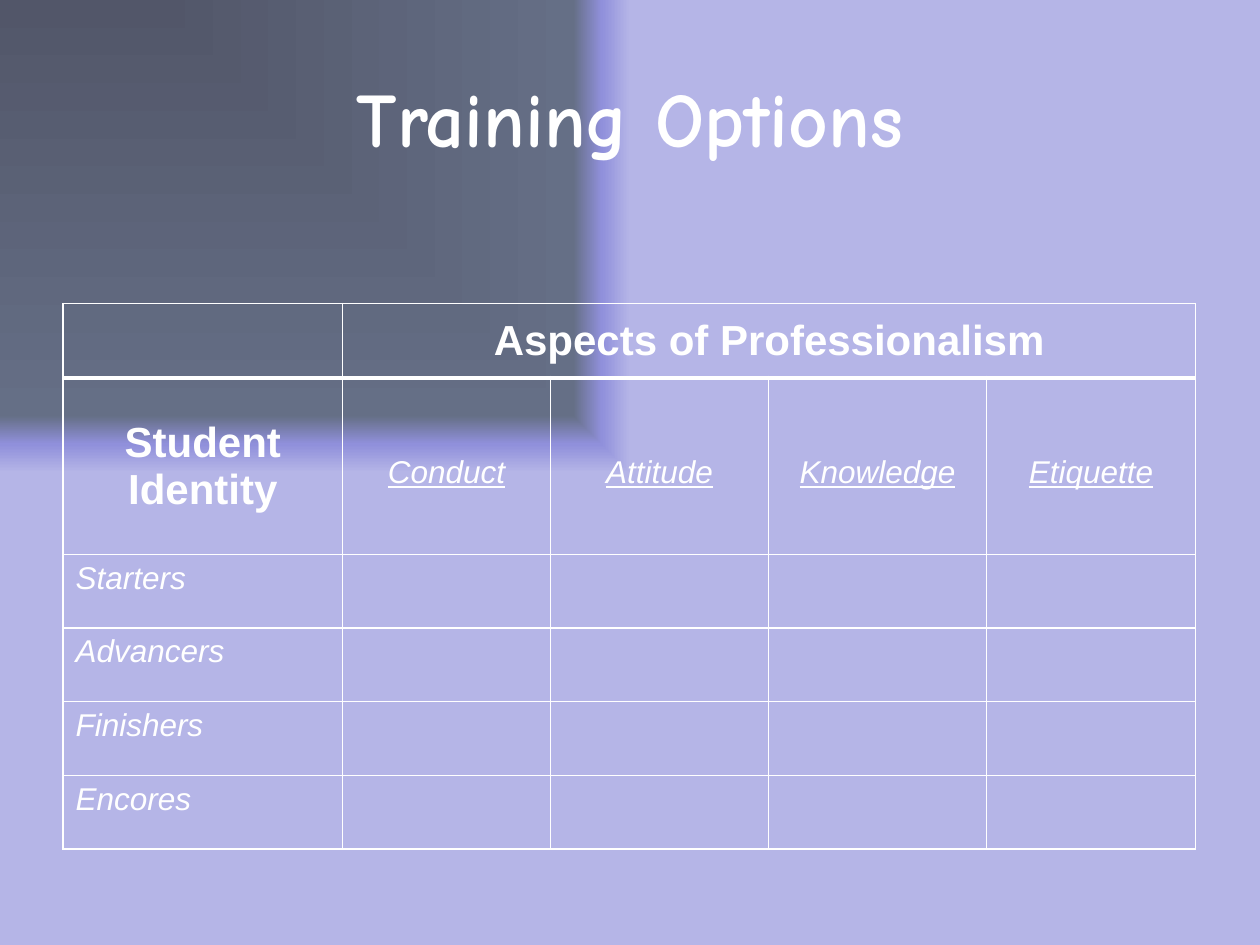
from dataclasses import dataclass

import pptx
import pptx.dml.color
import pptx.enum.text
import pptx.oxml
import pptx.oxml.ns
import pptx.util

Inches = pptx.util.Inches
Align = pptx.enum.text.PP_ALIGN
Anchor = pptx.enum.text.MSO_ANCHOR


@dataclass(frozen=True)
class Theme:
    ink: str = "FFFFFF"
    gradient: tuple = ((0, "525669"), (88, "656F86"), (94, "9090DB"), (100, "B5B5E7"))
    title_font: str = "Comic Neue"
    table_font: str = "Arial"
    title_size: int = 44
    heading_size: int = 24
    label_size: int = 18
    thin: int = 1
    thick: int = 3


THEME = Theme()
COLUMN_WIDTHS = (2.22, 1.65, 1.73, 1.73, 1.66)
ROW_HEIGHTS = (0.59, 1.4) + (0.585,) * 4
ASPECTS = ("Conduct", "Attitude", "Knowledge", "Etiquette")
STUDENTS = ("Starters", "Advancers", "Finishers", "Encores")


def set_background(slide):
    """Fill the slide with a rectangular gradient spreading from the top left."""
    stops = "".join(
        f'<a:gs pos="{share * 1000}"><a:srgbClr val="{color}"/></a:gs>'
        for share, color in THEME.gradient
    )
    background = pptx.oxml.parse_xml(
        f'<p:bg {pptx.oxml.ns.nsdecls("p", "a")}><p:bgPr>'
        f'<a:gradFill rotWithShape="0"><a:gsLst>{stops}</a:gsLst>'
        '<a:path path="rect"><a:fillToRect r="100000" b="100000"/></a:path>'
        "</a:gradFill><a:effectLst/></p:bgPr></p:bg>"
    )
    slide.element.cSld.insert(0, background)


def format_text(para, font, size, align, bold=False, italic=False, underline=False):
    para.alignment = align
    for span in para.runs:
        span.font.name = font
        span.font.size = pptx.util.Pt(size)
        span.font.bold = bold
        span.font.italic = italic
        span.font.underline = underline
        span.font.color.rgb = pptx.dml.color.RGBColor.from_string(THEME.ink)


def add_title(slide, text):
    title = slide.shapes.title
    title.left, title.top = Inches(0.5), Inches(0.3)
    title.width, title.height = Inches(9), Inches(1.25)
    title.text_frame.text = text
    title.text_frame.vertical_anchor = Anchor.MIDDLE
    format_text(title.text_frame.paragraphs[0], THEME.title_font, THEME.title_size,
                Align.CENTER, bold=True)


def set_borders(cell, top, bottom):
    properties = cell._tc.get_or_add_tcPr()
    sides = {"lnL": THEME.thin, "lnR": THEME.thin, "lnT": top, "lnB": bottom}
    for side, points in sides.items():
        properties.append(pptx.oxml.parse_xml(
            f'<a:{side} {pptx.oxml.ns.nsdecls("a")} w="{pptx.util.Pt(points)}">'
            f'<a:solidFill><a:srgbClr val="{THEME.ink}"/></a:solidFill></a:{side}>'
        ))


def add_grid(slide):
    frame = slide.shapes.add_table(
        len(ROW_HEIGHTS), len(COLUMN_WIDTHS), Inches(0.5), Inches(2.41),
        Inches(sum(COLUMN_WIDTHS)), Inches(sum(ROW_HEIGHTS)))
    table = frame.table
    table.first_row = table.horz_banding = False
    for column, width in zip(table.columns, COLUMN_WIDTHS):
        column.width = Inches(width)
    for index, (row, height) in enumerate(zip(table.rows, ROW_HEIGHTS)):
        row.height = Inches(height)
        for cell in row.cells:
            set_borders(cell,
                        top=THEME.thick if index == 1 else THEME.thin,
                        bottom=THEME.thick if index == 0 else THEME.thin)
            cell.fill.background()
    return table


def write_heading(cell, text):
    cell.text_frame.text = text
    cell.vertical_anchor = Anchor.MIDDLE
    format_text(cell.text_frame.paragraphs[0], THEME.table_font, THEME.heading_size,
                Align.CENTER, bold=True)


def write_label(cell, text, align=Align.LEFT, underline=False):
    cell.text_frame.text = text
    format_text(cell.text_frame.paragraphs[0], THEME.table_font, THEME.label_size,
                align, italic=True, underline=underline)


def fill_table(table):
    table.cell(0, 1).merge(table.cell(0, len(ASPECTS)))
    write_heading(table.cell(0, 1), "Aspects of Professionalism")
    write_heading(table.cell(1, 0), "Student Identity")
    for column, aspect in enumerate(ASPECTS, start=1):
        cell = table.cell(1, column)
        write_label(cell, aspect, Align.CENTER, underline=True)
        cell.margin_top = Inches(0.61)
    for row, student in enumerate(STUDENTS, start=2):
        write_label(table.cell(row, 0), student)


def main():
    deck = pptx.Presentation()
    deck.slide_width, deck.slide_height = Inches(10), Inches(7.5)
    slide = deck.slides.add_slide(deck.slide_layouts.get_by_name("Title Only"))
    set_background(slide)
    add_title(slide, "Training Options")
    fill_table(add_grid(slide))
    deck.save("out.pptx")


if __name__ == "__main__":
    main()
